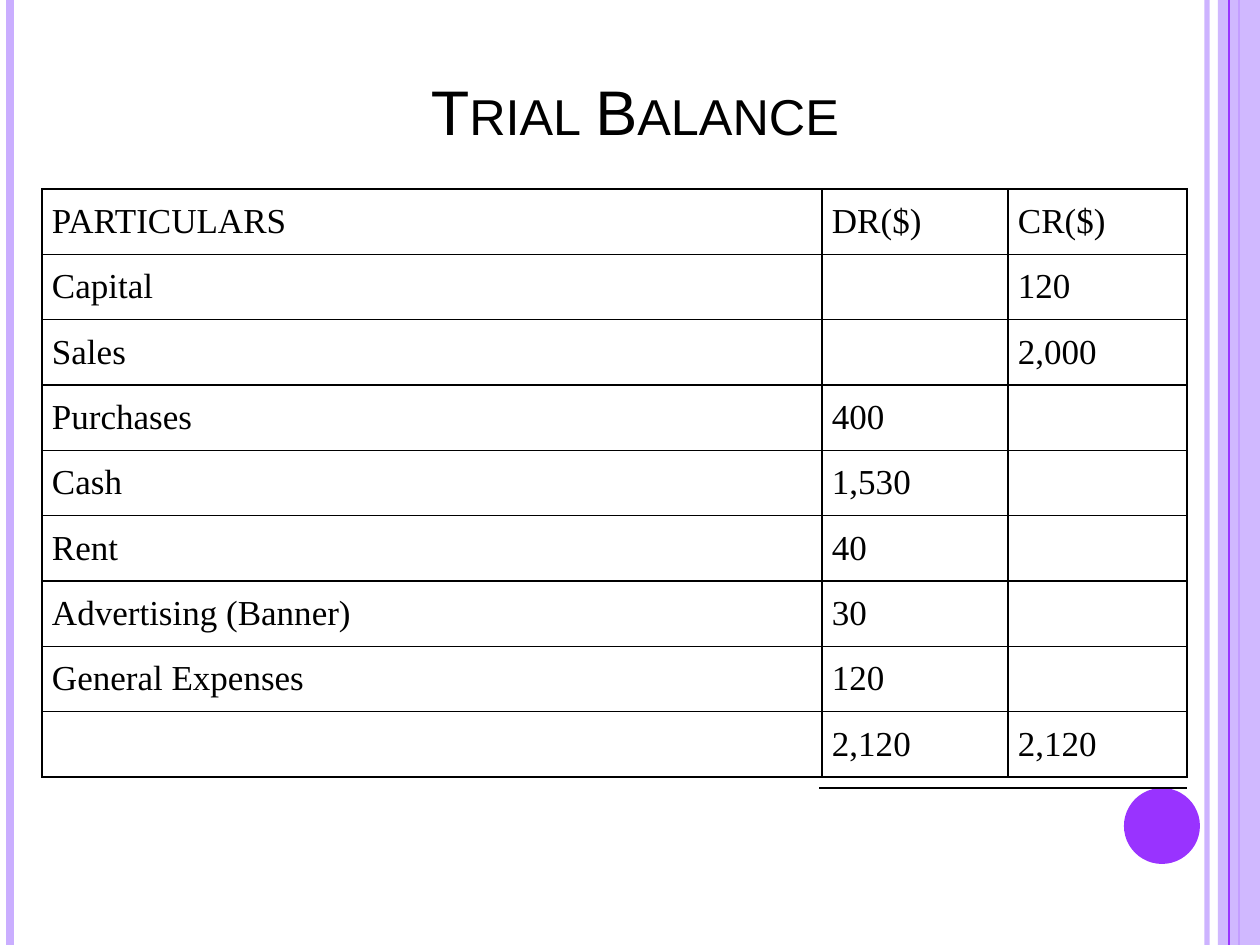
from pptx import Presentation
from pptx.dml.color import RGBColor
from pptx.enum.shapes import MSO_CONNECTOR as Connector, MSO_SHAPE as Shape
from pptx.enum.text import MSO_ANCHOR as Anchor, PP_ALIGN as Align
from pptx.oxml.ns import qn
from pptx.util import Pt
from lxml.etree import SubElement

EMU_PER_PX = 914400 / 126
WIDTH, HEIGHT = 1260, 945
BLACK, LILAC, VIOLET = "000000", "CAAEFF", "9933FF"

COLUMN_WIDTHS = [780, 186, 179]
TABLE_HEIGHT = 588
LEDGER = [
    ("PARTICULARS", "DR($)", "CR($)"),
    ("Capital", "", "120"),
    ("Sales", "", "2,000"),
    ("Purchases", "400", ""),
    ("Cash", "1,530", ""),
    ("Rent", "40", ""),
    ("Advertising (Banner)", "30", ""),
    ("General Expenses", "120", ""),
    ("", "2,120", "2,120"),
]


def px(length):
    return round(length * EMU_PER_PX)


def color(hex_code):
    return RGBColor.from_string(hex_code)


def set_opacity(solid_fill, percent):
    SubElement(solid_fill[0], qn("a:alpha"), val=str(percent * 1000))


def write(frame, text, font="Times New Roman", size=20, align=Align.JUSTIFY, small_caps=False):
    paragraph = frame.paragraphs[0]
    paragraph.alignment = align
    paragraph.font.size = Pt(size)
    if not text:
        return
    run = paragraph.add_run()
    run.text = text
    run.font.name = font
    run.font.size = Pt(size)
    run.font.bold = False
    run.font.color.rgb = color(BLACK)
    if small_caps:
        run.font._element.set("cap", "small")


def add_rule(slide, start, end, hex_code, weight, opacity=100):
    rule = slide.shapes.add_connector(Connector.STRAIGHT, *map(px, start + end))
    rule.line.color.rgb = color(hex_code)
    rule.line.width = Pt(weight)
    properties = rule._element.spPr
    if opacity < 100:
        set_opacity(properties.find(qn("a:ln")).find(qn("a:solidFill")), opacity)
    SubElement(properties, qn("a:effectLst"))


def add_stripe(slide, x, hex_code, weight, opacity=100):
    add_rule(slide, (x, 0), (x, HEIGHT), hex_code, weight, opacity)


def add_filled(slide, kind, box, hex_code, opacity=100):
    shape = slide.shapes.add_shape(kind, *map(px, box))
    shape.shadow.inherit = False
    shape.fill.solid()
    shape.fill.fore_color.rgb = color(hex_code)
    shape.line.fill.background()
    if opacity < 100:
        set_opacity(shape._element.spPr.find(qn("a:solidFill")), opacity)


def add_title(slide, text):
    frame = slide.shapes.add_textbox(px(63), px(32), px(1144), px(157)).text_frame
    frame.word_wrap = True
    frame.vertical_anchor = Anchor.MIDDLE
    write(frame, text, font="Arial", size=36, align=Align.CENTER, small_caps=True)


def add_borders(cell, hex_code, weight):
    properties = cell._tc.get_or_add_tcPr()
    for side in ("lnL", "lnR", "lnT", "lnB"):
        border = SubElement(properties, qn(f"a:{side}"), w=str(Pt(weight)))
        fill = SubElement(border, qn("a:solidFill"))
        SubElement(fill, qn("a:srgbClr"), val=hex_code)


def add_ledger(slide, entries):
    table = slide.shapes.add_table(
        len(entries), len(COLUMN_WIDTHS), px(42), px(189), px(sum(COLUMN_WIDTHS)), px(TABLE_HEIGHT)
    ).table
    table.first_row = False
    table.horz_banding = False
    for column, width in zip(table.columns, COLUMN_WIDTHS):
        column.width = px(width)
    for row, entry in zip(table.rows, entries):
        row.height = px(TABLE_HEIGHT) // len(entries)
        for cell, text in zip(row.cells, entry):
            add_borders(cell, BLACK, 1)
            cell.fill.background()
            cell.vertical_anchor = Anchor.MIDDLE
            cell.margin_left = cell.margin_right = px(10)
            cell.margin_top = cell.margin_bottom = 0
            write(cell.text_frame, text)


def main():
    deck = Presentation()
    deck.slide_width, deck.slide_height = px(WIDTH), px(HEIGHT)
    slide = deck.slides.add_slide(deck.slide_layouts[6])

    add_stripe(slide, 1207, LILAC, 3, opacity=93)
    add_stripe(slide, 10, LILAC, 4.5)
    add_stripe(slide, 1239, VIOLET, 1.5)
    add_filled(slide, Shape.RECTANGLE, (1218, 0, 42, HEIGHT), LILAC, opacity=87)
    add_stripe(slide, 1229, VIOLET, 0.75)
    add_filled(slide, Shape.OVAL, (1124, 788, 76, 76), VIOLET)

    add_title(slide, "Trial Balance")
    add_ledger(slide, LEDGER)
    add_rule(slide, (819, 788), (1187, 788), BLACK, 0.75)

    deck.save("out.pptx")


if __name__ == "__main__":
    main()
